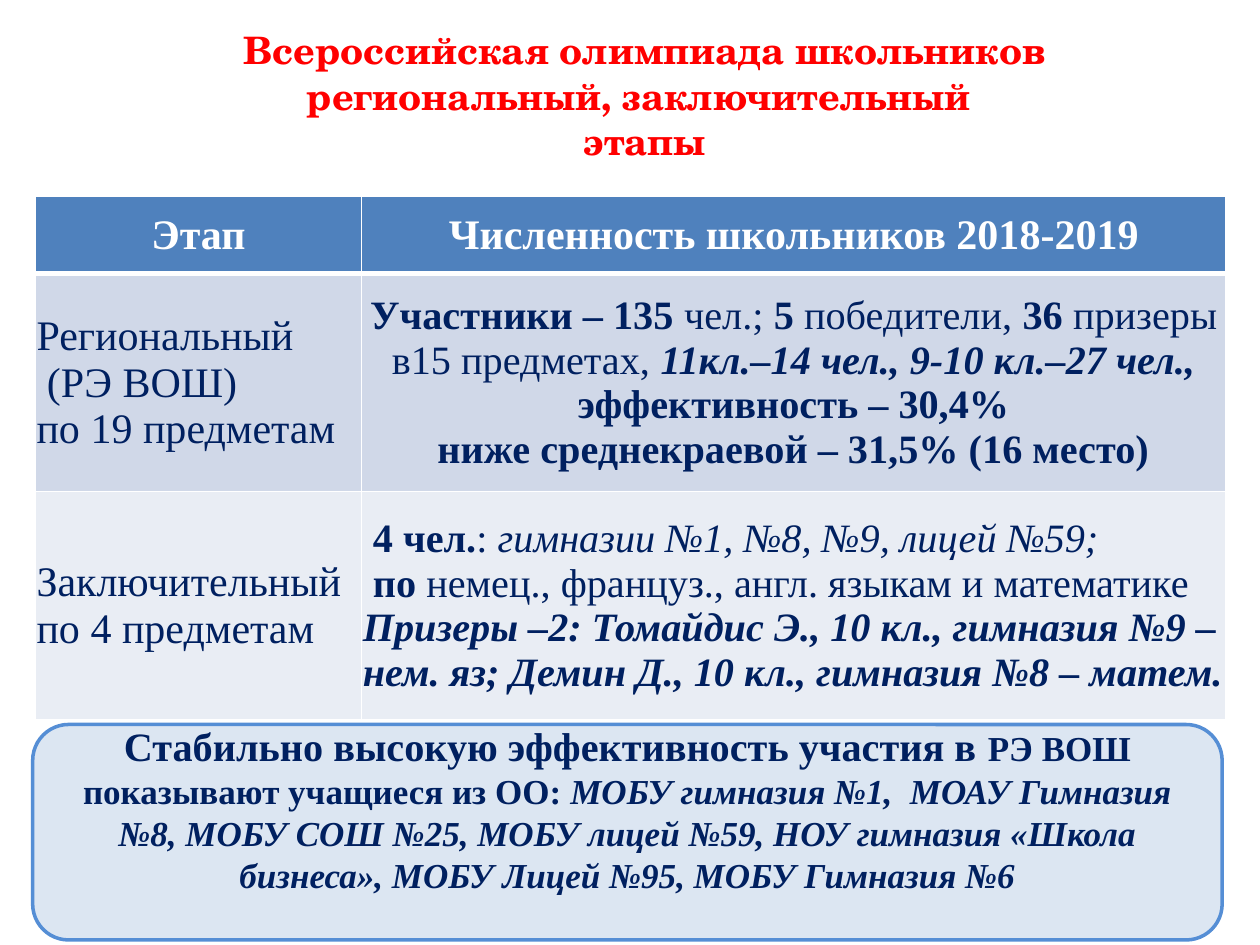
from dataclasses import dataclass

from lxml import etree
from pptx import Presentation
from pptx.dml.color import RGBColor
from pptx.enum.shapes import MSO_SHAPE
from pptx.enum.text import MSO_ANCHOR, PP_ALIGN
from pptx.oxml.ns import qn
from pptx.util import Inches, Pt

ROUNDED = MSO_SHAPE.ROUNDED_RECTANGLE
MIDDLE = MSO_ANCHOR.MIDDLE
LEFT, CENTER = PP_ALIGN.LEFT, PP_ALIGN.CENTER
PLAIN, BOLD, ITALIC, BOLD_ITALIC = (False, False), (True, False), (False, True), (True, True)


@dataclass(frozen=True)
class Theme:
    title_font: str = "TeX Gyre Schola"
    body_font: str = "Times New Roman"
    title_color: str = "FF0000"
    ink: str = "002060"
    white: str = "FFFFFF"
    header_fill: str = "4F81BD"
    row_fills: tuple = ("D0D8E8", "E9EDF4")
    note_fill: str = "DCE6F2"
    note_line: str = "558ED5"
    title_size: float = 21.6
    label_size: float = 24
    detail_size: float = 23
    note_size: float = 20


class SlideBuilder:
    """Holds the theme and the current slide, and adds elements to it."""

    def __init__(self, page, theme):
        self.page = page
        self.theme = theme

    def fill_text(self, frame, paragraphs, size, color, align, font=None):
        frame.word_wrap = True
        frame.vertical_anchor = MIDDLE
        for index, spans in enumerate(paragraphs):
            para = frame.paragraphs[0] if index == 0 else frame.add_paragraph()
            para.alignment = align
            para.font.name = font or self.theme.body_font
            para.font.size = Pt(size)
            para.font.color.rgb = RGBColor.from_string(color)
            for text, (bold, italic), *own_size in spans:
                for line_index, line in enumerate(text.split("\n")):
                    if line_index:
                        para.add_line_break()
                    span = para.add_run()
                    span.text = line
                    span.font.bold = bold
                    span.font.italic = italic
                    if own_size:
                        span.font.size = Pt(own_size[0])

    def title(self, text, left, top, width, height):
        box = self.page.shapes.add_textbox(Inches(left), Inches(top), Inches(width), Inches(height))
        theme = self.theme
        self.fill_text(box.text_frame, [[(text, BOLD)]], theme.title_size,
                       theme.title_color, CENTER, theme.title_font)

    def border(self, cell, side, points):
        properties = cell._tc.get_or_add_tcPr()
        line = etree.SubElement(properties, qn(f"a:ln{side}"), w=str(Pt(points)))
        fill = etree.SubElement(line, qn("a:solidFill"))
        etree.SubElement(fill, qn("a:srgbClr"), val=self.theme.white)

    def table(self, rows, left, top, widths, heights):
        theme = self.theme
        grid = self.page.shapes.add_table(
            len(rows), len(widths), Inches(left), Inches(top),
            Inches(sum(widths)), Inches(sum(heights))).table
        for column, width in zip(grid.columns, widths):
            column.width = Inches(width)
        fills = (theme.header_fill, *theme.row_fills)
        for r, (row, height, fill) in enumerate(zip(rows, heights, fills)):
            grid.rows[r].height = Inches(height)
            for c, (paragraphs, size, align) in enumerate(row):
                cell = grid.cell(r, c)
                cell.margin_left = cell.margin_right = cell.margin_top = Inches(0.01)
                cell.margin_bottom = 0
                cell.vertical_anchor = MIDDLE
                for side, points in (("L", 1), ("R", 1), ("T", 3 if r == 1 else 1),
                                     ("B", 3 if r == 0 else 1)):
                    self.border(cell, side, points)
                cell.fill.solid()
                cell.fill.fore_color.rgb = RGBColor.from_string(fill)
                color = theme.white if r == 0 else theme.ink
                self.fill_text(cell.text_frame, paragraphs, size, color, align)

    def note(self, paragraphs, left, top, width, height):
        theme = self.theme
        panel = self.page.shapes.add_shape(
            ROUNDED, Inches(left), Inches(top), Inches(width), Inches(height))
        panel.shadow.inherit = False
        panel.fill.solid()
        panel.fill.fore_color.rgb = RGBColor.from_string(theme.note_fill)
        panel.line.color.rgb = RGBColor.from_string(theme.note_line)
        panel.line.width = Pt(2)
        panel.text_frame.margin_bottom = Inches(0.42)
        self.fill_text(panel.text_frame, paragraphs, theme.note_size, theme.ink, CENTER)


def main():
    theme = Theme()
    deck = Presentation()
    deck.slide_width, deck.slide_height = Inches(10), Inches(7.5)
    builder = SlideBuilder(deck.slides.add_slide(deck.slide_layouts[6]), theme)

    label, detail = theme.label_size, theme.detail_size
    header = [([[(text, BOLD)]], label, CENTER)
              for text in ("Этап", "Численность школьников 2018-2019")]
    regional = [
        ([[("Региональный", PLAIN)], [(" (РЭ ВОШ)", PLAIN)], [("по 19 предметам", PLAIN)]],
         label, LEFT),
        ([[("Участники – 135 ", BOLD), ("чел.; ", PLAIN), ("5 ", BOLD), ("победители, ", PLAIN),
           ("36 ", BOLD), ("призеры в15 предметах, ", PLAIN),
           ("11кл.–14 чел., 9-10 кл.–27 чел., ", BOLD_ITALIC), ("эффективность – 30,4%", BOLD)],
          [("ниже среднекраевой – 31,5% (16 место)", BOLD)]], detail, CENTER),
    ]
    final = [
        ([[("Заключительный", PLAIN)], [("по 4 предметам", PLAIN)]], label, LEFT),
        ([[(" 4 чел.", BOLD), (": ", PLAIN), ("гимназии №1, №8, №9, лицей №59;", ITALIC)],
          [(" по", BOLD), (" немец., француз., англ. языкам и математике", PLAIN)],
          [("Призеры –2: Томайдис Э., 10 кл., гимназия №9 –нем. яз; "
            "Демин Д., 10 кл., гимназия №8 – матем.", BOLD_ITALIC)]], detail, LEFT),
    ]
    builder.table([header, regional, final], 0.28, 1.56, (2.59, 6.86), (0.61, 1.73, 1.81))
    builder.note([[
        ("Стабильно высокую эффективность участия в ", BOLD, detail),
        ("РЭ ВОШ показывают учащиеся из ОО: ", BOLD),
        ("МОБУ гимназия №1,  МОАУ Гимназия №8, МОБУ СОШ №25, МОБУ лицей №59, "
         "НОУ гимназия «Школа бизнеса», МОБУ Лицей №95, МОБУ Гимназия №6", BOLD_ITALIC),
    ]], 0.26, 5.75, 9.44, 1.71)
    builder.title("Всероссийская олимпиада школьников\nрегиональный, заключительный \nэтапы",
                  1.61, 0.13, 7.01, 1.25)
    deck.save("out.pptx")


if __name__ == "__main__":
    main()
